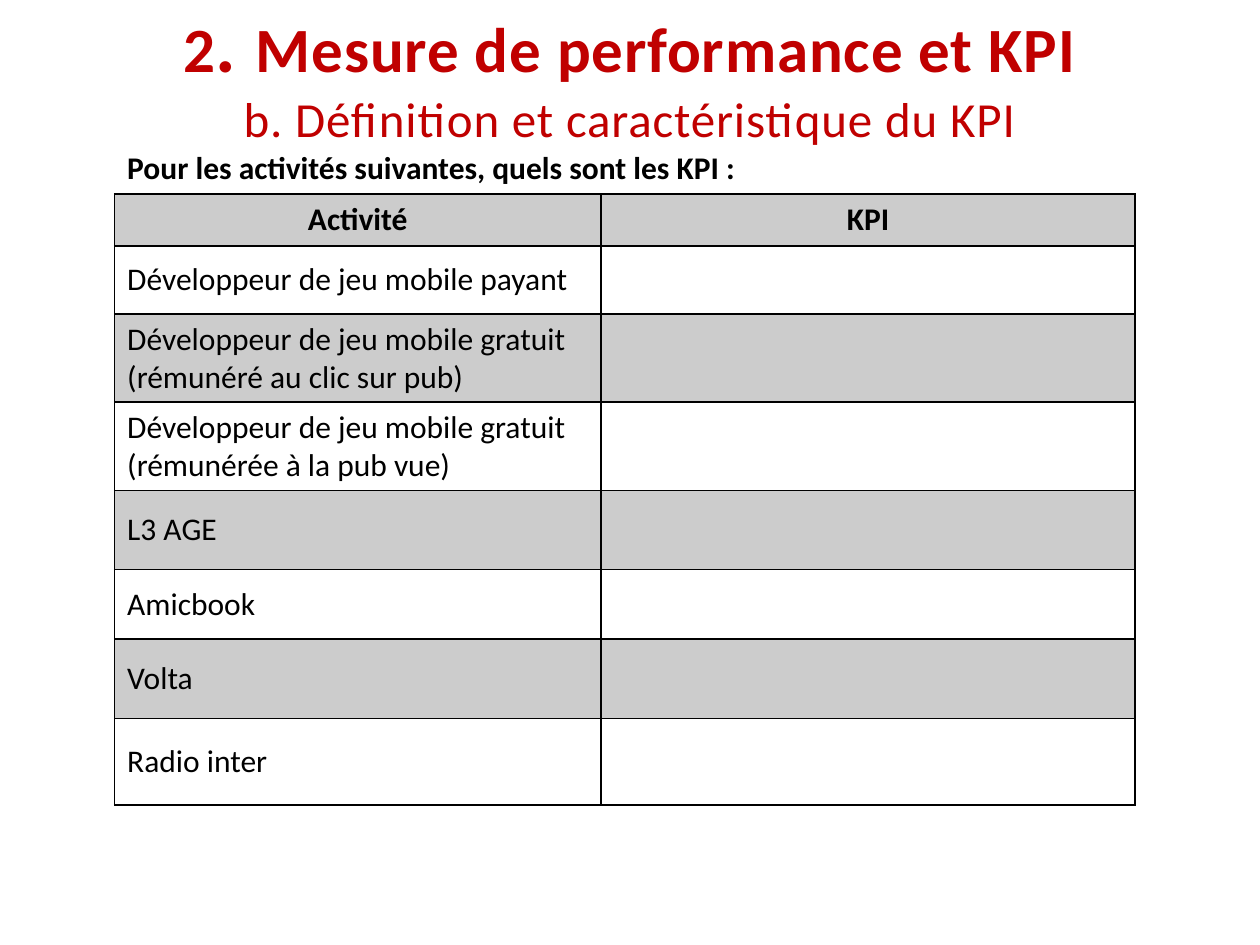
import pptx
import pptx.util
import pptx.dml.color
import pptx.enum.text
import pptx.oxml
import pptx.oxml.ns
import lxml.etree

theme = {
    "font": "Calibri", "title": "C00000", "ink": "000000", "shade": 20,
    "heading": 36, "dot": 44, "subheading": 28, "body": 18, "line": 1,
}
ALIGN = pptx.enum.text.PP_ALIGN
ANCHOR = pptx.enum.text.MSO_ANCHOR
qn = pptx.oxml.ns.qn


def add_run(p, text, size, color, bold):
    r = p.add_run()
    r.text = text
    r.font.name = theme["font"]
    r.font.size = pptx.util.Pt(size)
    r.font.bold = bold
    r.font.color.rgb = pptx.dml.color.RGBColor.from_string(color)
    return r


def set_borders(cell, sides):
    tcPr = cell._tc.get_or_add_tcPr()
    for i, side in enumerate("LRTB"):
        ln = lxml.etree.Element(qn(f"a:ln{side}"), w=str(pptx.util.Pt(theme["line"])))
        if side in sides:
            fill = lxml.etree.SubElement(ln, qn("a:solidFill"))
            lxml.etree.SubElement(fill, qn("a:srgbClr"), val=theme["ink"])
        else:
            lxml.etree.SubElement(ln, qn("a:noFill"))
        tcPr.insert(i, ln)


prs = pptx.Presentation()
prs.slide_width = pptx.util.Inches(10)
prs.slide_height = pptx.util.Inches(7.5)
col = prs.slide_width / 100
row = prs.slide_height / 100
s = prs.slides.add_slide(prs.slide_layouts[6])

sp = s.shapes.add_textbox(int(5 * col), int(-1.1 * row), int(90 * col), int(16.67 * row))
tf = sp.text_frame
tf.word_wrap = True
tf.vertical_anchor = ANCHOR.TOP
title = [
    [("2", "heading", True), (". ", "dot", True),
     ("Mesure de performance et KPI", "heading", True)],
    [("b. Définition et caractéristique du KPI", "subheading", False)],
]
for i, runs in enumerate(title):
    p = tf.add_paragraph() if i else tf.paragraphs[0]
    p.alignment = ALIGN.CENTER
    for text, size, bold in runs:
        r = add_run(p, text, theme[size], theme["title"], bold)
        r._r.get_or_add_rPr().set("spc", "50")

rows = [
    (4.27, ["Pour les activités suivantes, quels sont les KPI :"]),
    (5.47, ["Activité"]),
    (7.2, ["Développeur de jeu mobile payant"]),
    (8.4, ["Développeur de jeu mobile gratuit (rémunéré au clic sur pub)"]),
    (8.4, ["Développeur de jeu mobile gratuit", "(rémunérée à la pub vue)"]),
    (8.4, ["L3 AGE"]),
    (7.33, ["Amicbook"]),
    (8.4, ["Volta"]),
    (9.2, ["Radio inter"]),
]
widths = [38.6, 42.4]
table = s.shapes.add_table(
    len(rows), len(widths), int(9.1 * col), int(15.2 * row),
    int(sum(widths) * col), int(sum(h for h, _ in rows) * row)).table
table.first_row = False
table.horz_banding = False
for c, width in enumerate(widths):
    table.columns[c].width = int(width * col)

for n, (height, lines) in enumerate(rows):
    table.rows[n].height = int(height * row)
    is_header = n == 1
    for c in range(len(widths)):
        cell = table.cell(n, c)
        cell.vertical_anchor = ANCHOR.MIDDLE if n else ANCHOR.TOP
        if n % 2:
            cell.fill.solid()
            cell.fill.fore_color.rgb = pptx.dml.color.RGBColor.from_string(theme["ink"])
            clr = cell._tc.tcPr.find(".//" + qn("a:srgbClr"))
            lxml.etree.SubElement(clr, qn("a:alpha"), val=str(theme["shade"] * 1000))
        else:
            cell.fill.background()
        set_borders(cell, "LRTB" if n else "B")
        texts = lines if c == 0 else ["KPI"] if is_header else []
        for i, text in enumerate(texts):
            p = cell.text_frame.add_paragraph() if i else cell.text_frame.paragraphs[0]
            p.alignment = ALIGN.CENTER if is_header else ALIGN.LEFT
            add_run(p, text, theme["body"], theme["ink"], n < 2)
table.cell(0, 0).merge(table.cell(0, 1))

prs.save("out.pptx")
